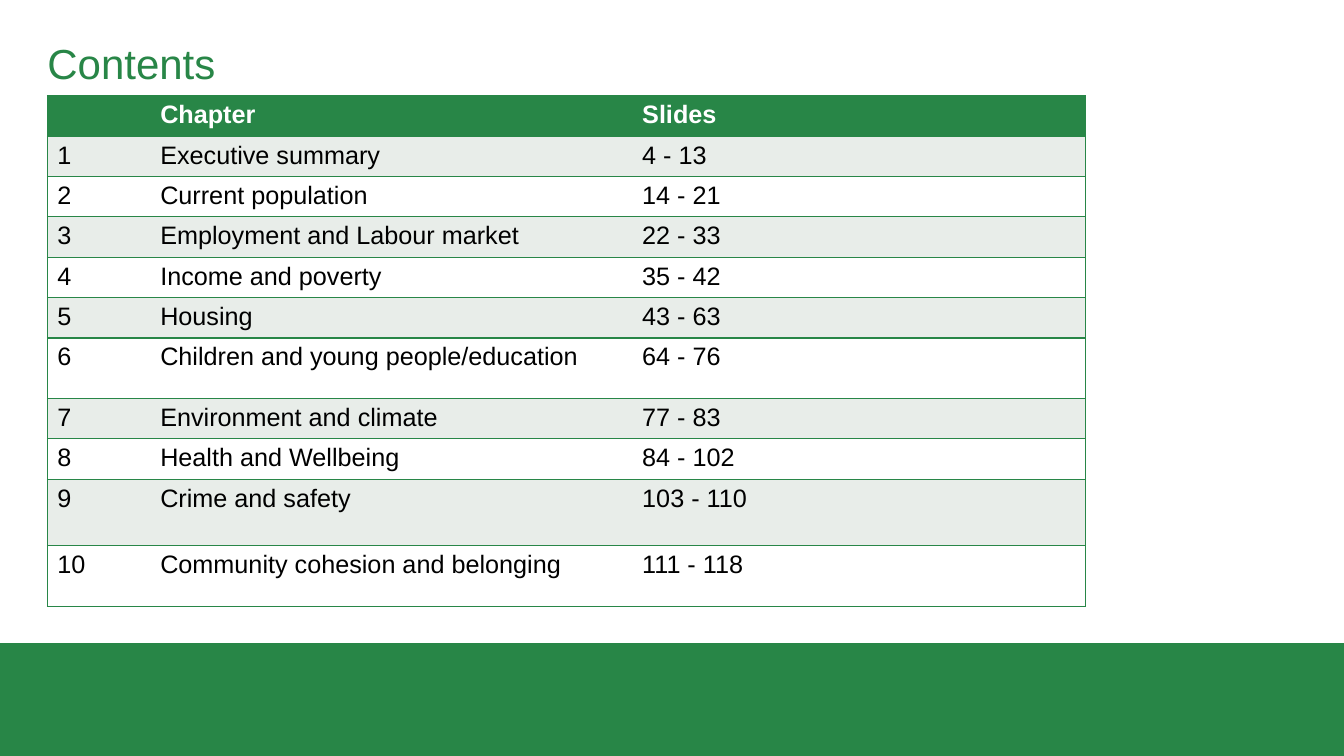
from pptx import Presentation
from pptx.dml.color import RGBColor
from pptx.enum.shapes import MSO_SHAPE
from pptx.enum.text import MSO_ANCHOR
from pptx.oxml.ns import qn
from pptx.util import Inches, Pt
from lxml import etree

RECTANGLE = MSO_SHAPE.RECTANGLE
TOP = MSO_ANCHOR.TOP

GREEN = RGBColor(0x28, 0x86, 0x47)
PALE = RGBColor(0xE8, 0xED, 0xE9)
WHITE = RGBColor(0xFF, 0xFF, 0xFF)
BLACK = RGBColor(0, 0, 0)
FONT = "Arial"

SLIDE_W, SLIDE_H = 13.33, 7.5
COLUMN_WIDTHS = [1.02, 4.78, 4.5]
ROW_HEIGHT = 0.38
TALL_ROWS = {6: 0.6, 9: 0.66, 10: 0.6}
HEADER = ("", "Chapter", "Slides")
CHAPTERS = [
    ("Executive summary", "4 - 13"),
    ("Current population", "14 - 21"),
    ("Employment and Labour market", "22 - 33"),
    ("Income and poverty", "35 - 42"),
    ("Housing", "43 - 63"),
    ("Children and young people/education", "64 - 76"),
    ("Environment and climate", "77 - 83"),
    ("Health and Wellbeing", "84 - 102"),
    ("Crime and safety", "103 - 110"),
    ("Community cohesion and belonging", "111 - 118"),
]


def add_run(p, text, size, color, bold=False):
    r = p.add_run()
    r.text = text
    r.font.name = FONT
    r.font.size = Pt(size)
    r.font.bold = bold
    r.font.color.rgb = color


def add_footer_band(s, left, top, width, height):
    sp = s.shapes.add_shape(RECTANGLE, Inches(left), Inches(top),
                            Inches(width), Inches(height))
    sp.shadow.inherit = False
    sp.fill.solid()
    sp.fill.fore_color.rgb = GREEN
    sp.line.fill.background()


def add_title(s, text, left, top, width, height):
    sp = s.shapes.add_textbox(Inches(left), Inches(top),
                              Inches(width), Inches(height))
    tf = sp.text_frame
    tf.word_wrap = True
    tf.vertical_anchor = TOP
    tf.margin_left = tf.margin_right = tf.margin_top = tf.margin_bottom = 0
    p = tf.paragraphs[0]
    p.line_spacing = 0.9
    add_run(p, text, 30, GREEN)


def set_borders(cell, sides):
    """Draw green lines on the given sides (L, R, T, B) and none elsewhere."""
    tc_pr = cell._tc.get_or_add_tcPr()
    for side in "LRTB":
        ln = etree.SubElement(tc_pr, qn(f"a:ln{side}"), w=str(Pt(1)))
        if side in sides:
            fill = etree.SubElement(ln, qn("a:solidFill"))
            etree.SubElement(fill, qn("a:srgbClr"), val=str(GREEN))
        else:
            etree.SubElement(ln, qn("a:noFill"))


def add_contents_table(s, left, top):
    rows = [HEADER] + [(str(n), *chapter) for n, chapter in enumerate(CHAPTERS, 1)]
    heights = [TALL_ROWS.get(i, ROW_HEIGHT) for i in range(len(rows))]
    table = s.shapes.add_table(
        len(rows), len(COLUMN_WIDTHS), Inches(left), Inches(top),
        Inches(sum(COLUMN_WIDTHS)), Inches(sum(heights))).table
    table.horz_banding = False
    for column, width in zip(table.columns, COLUMN_WIDTHS):
        column.width = Inches(width)
    edges = ["LTB", "TB", "RTB"]
    for i, (values, height) in enumerate(zip(rows, heights)):
        table.rows[i].height = Inches(height)
        is_header = i == 0
        row_fill = GREEN if is_header else PALE if i % 2 else WHITE
        for j, text in enumerate(values):
            cell = table.cell(i, j)
            set_borders(cell, edges[j])
            cell.fill.solid()
            cell.fill.fore_color.rgb = row_fill
            if text:
                add_run(cell.text_frame.paragraphs[0], text, 18,
                        WHITE if is_header else BLACK, is_header)


def build_contents_slide(prs):
    s = prs.slides.add_slide(prs.slide_layouts[6])
    add_footer_band(s, 0, 6.38, SLIDE_W, SLIDE_H - 6.38)
    add_title(s, "Contents", 0.47, 0.43, 11.5, 1.16)
    add_contents_table(s, 0.47, 0.95)


def main():
    prs = Presentation()
    prs.slide_width = Inches(SLIDE_W)
    prs.slide_height = Inches(SLIDE_H)
    build_contents_slide(prs)
    prs.save("out.pptx")


if __name__ == "__main__":
    main()
